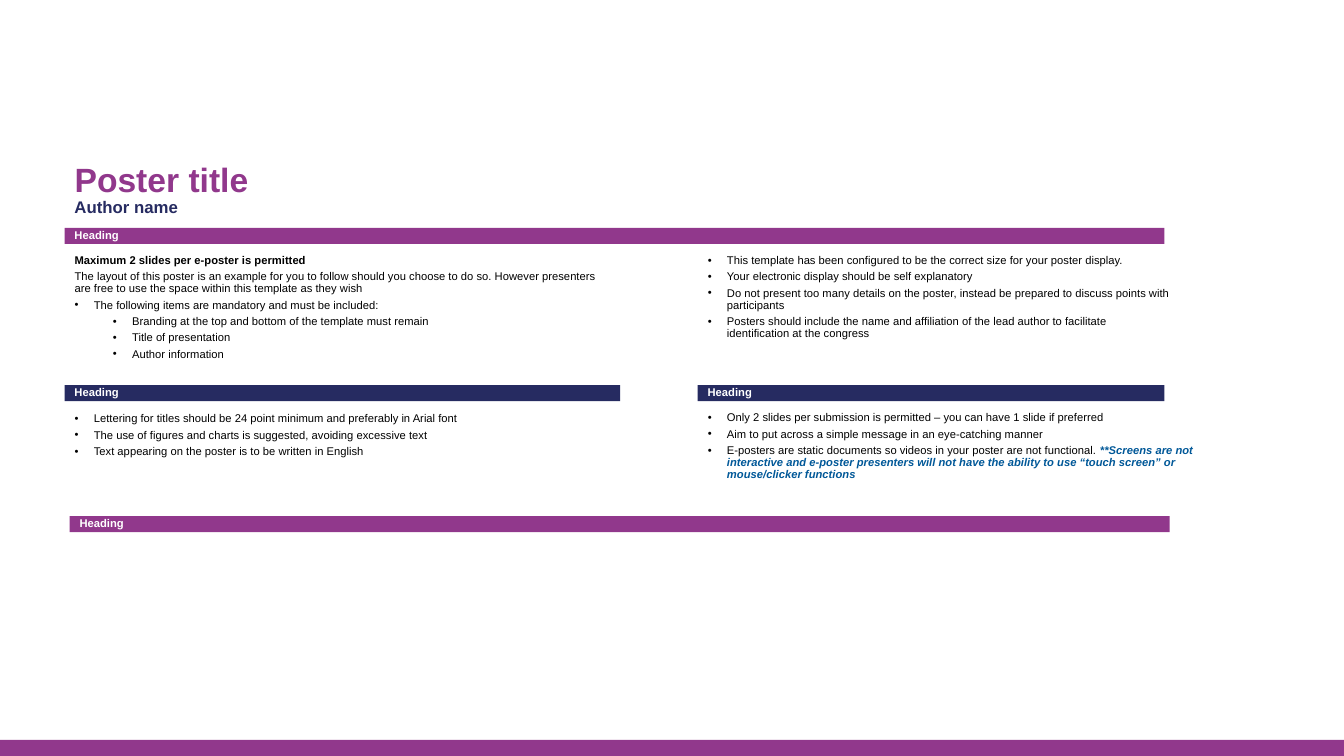
from lxml.etree import SubElement
from pptx import Presentation
from pptx.dml.color import RGBColor
from pptx.enum.shapes import MSO_SHAPE as Shape
from pptx.enum.text import MSO_ANCHOR as Anchor, MSO_AUTO_SIZE as AutoSize, PP_ALIGN as Align
from pptx.oxml.ns import qn
from pptx.util import Inches, Pt

COLORS = {"purple": "91388C", "navy": "262B61", "blue": "005898",
          "black": "000000", "white": "FFFFFF"}
WIDTH, HEIGHT = 13.33, 7.5
LEFT, RIGHT = 0.64, 6.92
COLUMN, BANNER, BAR = 5.51, 10.91, 0.16
INDENT = 0.19

INTRO = [
    ("Maximum 2 slides per e-poster is permitted", "bold"),
    ("The layout of this poster is an example for you to follow should you choose to do so. "
     "However presenters are free to use the space within this template as they wish", "plain"),
    ("The following items are mandatory and must be included:", "bullet"),
    ("Branding at the top and bottom of the template must remain", "sub"),
    ("Title of presentation", "sub"),
    ("Author information", "sub"),
]
DISPLAY = [(text, "bullet") for text in (
    "This template has been configured to be the correct size for your poster display.",
    "Your electronic display should be self explanatory",
    "Do not present too many details on the poster, instead be prepared to discuss "
    "points with participants",
    "Posters should include the name and affiliation of the lead author to facilitate "
    "identification at the congress",
)]
LETTERING = [(text, "bullet") for text in (
    "Lettering for titles should be 24 point minimum and preferably in Arial font",
    "The use of figures and charts is suggested, avoiding excessive text",
    "Text appearing on the poster is to be written in English",
)]
MESSAGE = [(text, "bullet") for text in (
    "Only 2 slides per submission is permitted – you can have 1 slide if preferred",
    "Aim to put across a simple message in an eye-catching manner",
    "E-posters are static documents so videos in your poster are not functional. ",
)]
WARNING = ("**Screens are not interactive and e-poster presenters will not have the ability "
           "to use “touch screen” or mouse/clicker functions")


def add_text(para, text, size=8, color="black", bold=False, italic=False):
    span = para.add_run()
    span.text = text
    font = span.font
    font.name, font.size, font.bold, font.italic = "Arial", Pt(size), bold, italic
    font.color.rgb = RGBColor.from_string(COLORS[color])


def set_paragraph(para, before=0, style="plain"):
    """Set spacing and, for list styles, the bullet and its hanging indent."""
    para.alignment = Align.LEFT
    para.line_spacing = 0.9
    para.space_before, para.space_after = Pt(before), Pt(0)
    para.level = 1 if style == "sub" else 0
    margin = {"bullet": INDENT, "sub": 3 * INDENT}.get(style, 0)
    props = para._p.get_or_add_pPr()
    props.set("marL", str(Inches(margin)))
    props.set("indent", str(-Inches(INDENT) if margin else 0))
    if margin:
        SubElement(props, qn("a:buChar")).set("char", "•")
    else:
        SubElement(props, qn("a:buNone"))


def prepare_frame(box, left, top, width, height):
    box.left, box.top = Inches(left), Inches(top)
    box.width, box.height = Inches(width), Inches(height)
    frame = box.text_frame
    frame.word_wrap = True
    frame.auto_size = AutoSize.NONE
    frame.vertical_anchor = Anchor.TOP
    return frame


def fill_line(box, place, text, **style):
    para = prepare_frame(box, *place).paragraphs[0]
    set_paragraph(para)
    add_text(para, text, bold=True, **style)


def fill_list(box, place, items):
    frame = prepare_frame(box, *place)
    for number, (text, style) in enumerate(items):
        para = frame.add_paragraph() if number else frame.paragraphs[0]
        set_paragraph(para, 3 if number else 0, style)
        add_text(para, text, bold=style == "bold")
    return frame


def add_bar(page, left, top, width, color, text=None):
    bar = page.shapes.add_shape(Shape.RECTANGLE, Inches(left), Inches(top),
                                Inches(width), Inches(BAR))
    bar.shadow.inherit = False
    bar.fill.solid()
    bar.fill.fore_color.rgb = RGBColor.from_string(COLORS[color])
    bar.line.fill.background()
    if text:
        frame = bar.text_frame
        frame.margin_top = frame.margin_bottom = 0
        frame.vertical_anchor = Anchor.MIDDLE
        set_paragraph(frame.paragraphs[0])
        add_text(frame.paragraphs[0], text, color="white", bold=True)


def add_title_block(page):
    fill_line(page.shapes.title, (LEFT, 1.57, 6.93, 0.47), "Poster title",
              size=24, color="purple")
    author = page.shapes.add_textbox(0, 0, 0, 0)
    fill_line(author, (LEFT, 1.93, 6.93, 0.36), "Author name", size=12, color="navy")


def add_headings(page):
    for left, top, width, color in [
        (LEFT, 2.26, BANNER, "purple"),
        (LEFT, 3.82, COLUMN, "navy"),
        (RIGHT, 3.82, LEFT + BANNER - RIGHT, "navy"),
        (LEFT + 0.05, 5.12, BANNER, "purple"),
    ]:
        add_bar(page, left, top, width, color, "Heading")


def add_lists(page):
    holders = page.placeholders
    fill_list(holders[1], (LEFT, 2.48, COLUMN, 1.31), INTRO)
    fill_list(holders[2], (RIGHT, 2.48, 4.79, 0.93), DISPLAY)
    fill_list(holders[3], (LEFT, 4.05, COLUMN, 1.01), LETTERING)
    message = fill_list(holders[4], (RIGHT, 4.04, 5.15, 1.02), MESSAGE)
    add_text(message.paragraphs[-1], WARNING, color="blue", bold=True, italic=True)


def main():
    deck = Presentation()
    deck.slide_width, deck.slide_height = Inches(WIDTH), Inches(HEIGHT)
    page = deck.slides.add_slide(deck.slide_layouts.get_by_name("Comparison"))
    add_bar(page, 0, HEIGHT - BAR, WIDTH, "purple")
    add_title_block(page)
    add_headings(page)
    add_lists(page)
    deck.save("out.pptx")


if __name__ == "__main__":
    main()
